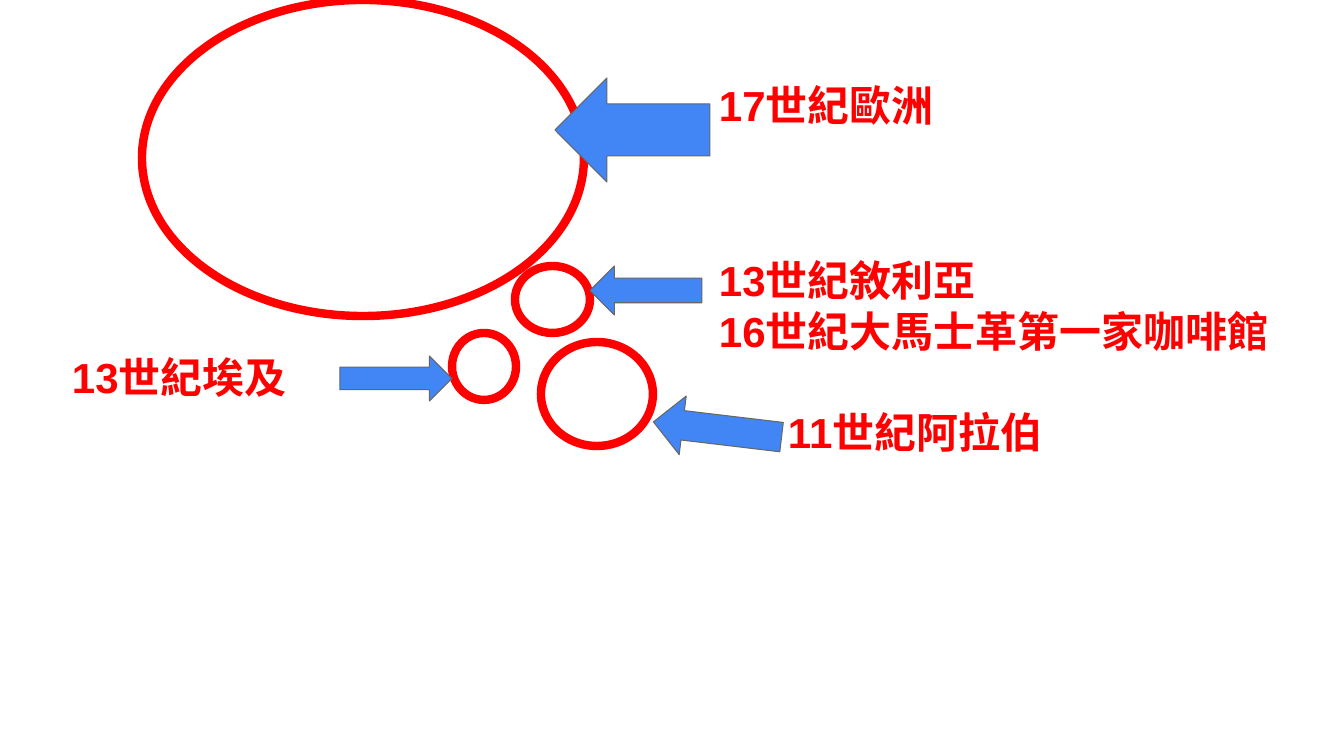
import pptx
import pptx.dml.color
import pptx.enum.shapes
import pptx.util

PX = 914400 / 100.8
SHAPE = pptx.enum.shapes.MSO_SHAPE
RED, BLUE, GREY = "FF0000", "4285F4", "666666"


def px(length):
    return pptx.util.Emu(round(length * PX))


def rgb(value):
    return pptx.dml.color.RGBColor.from_string(value)


def add_outline(slide, kind, box, line, width):
    shape = slide.shapes.add_shape(kind, *map(px, box))
    shape.shadow.inherit = False
    shape.fill.background()
    shape.line.color.rgb = rgb(line)
    shape.line.width = pptx.util.Pt(width)
    return shape


def add_region(slide, box):
    """Ring a region of the map."""
    add_outline(slide, SHAPE.OVAL, box, RED, 6)


def add_arrow(slide, box, kind=SHAPE.LEFT_ARROW, rotation=0):
    arrow = add_outline(slide, kind, box, GREY, 0.75)
    arrow.fill.solid()
    arrow.fill.fore_color.rgb = rgb(BLUE)
    arrow.rotation = rotation


def write(paragraph, text, size=30, color=RED, bold=True, indent=0, before=0):
    run = paragraph.add_run()
    run.text = text
    run.font.name = "Arial"
    run.font.size = pptx.util.Pt(size)
    run.font.bold = bold
    run.font.color.rgb = rgb(color)
    paragraph.space_before = pptx.util.Pt(before)
    if indent:
        properties = paragraph._p.get_or_add_pPr()
        properties.set("marL", str(px(indent)))
        properties.set("indent", "0")


def add_label(slide, box, lines, top=10):
    """Add a text box; each line is a text and its format."""
    frame = slide.shapes.add_textbox(*map(px, box)).text_frame
    frame.word_wrap = True
    frame.margin_left = frame.margin_right = frame.margin_bottom = px(10)
    frame.margin_top = px(top)
    for number, (text, style) in enumerate(lines):
        paragraph = frame.add_paragraph() if number else frame.paragraphs[0]
        write(paragraph, text, **style)


def main():
    deck = pptx.Presentation()
    deck.slide_width, deck.slide_height = px(1344), px(756)
    slide = deck.slides.add_slide(deck.slide_layouts[6])

    arabia = (541, 342, 112, 104)
    europe = (142, 0, 442, 316)
    egypt = (452, 333, 64, 67)
    syria = (515, 266, 75, 67)
    for region in (arabia, europe, egypt, syria):
        add_region(slide, region)

    add_arrow(slide, (555, 78, 155, 104))
    add_label(slide, (709, 197, 636, 287), [
        ("13世紀敘利亞", {}),
        ("16世紀大馬士革第一家咖啡館", {}),
        ("11世紀阿拉伯", {"indent": 69, "before": 36}),
    ], top=58)
    add_arrow(slide, (590, 266, 112, 49))
    add_arrow(slide, (653, 400, 129, 59), rotation=6.8)
    add_label(slide, (62, 342, 310, 104), [("13世紀埃及", {})])
    add_arrow(slide, (340, 356, 112, 45), SHAPE.RIGHT_ARROW)
    add_label(slide, (709, 70, 481, 77), [("17世紀歐洲", {})])

    deck.save("out.pptx")


if __name__ == "__main__":
    main()
